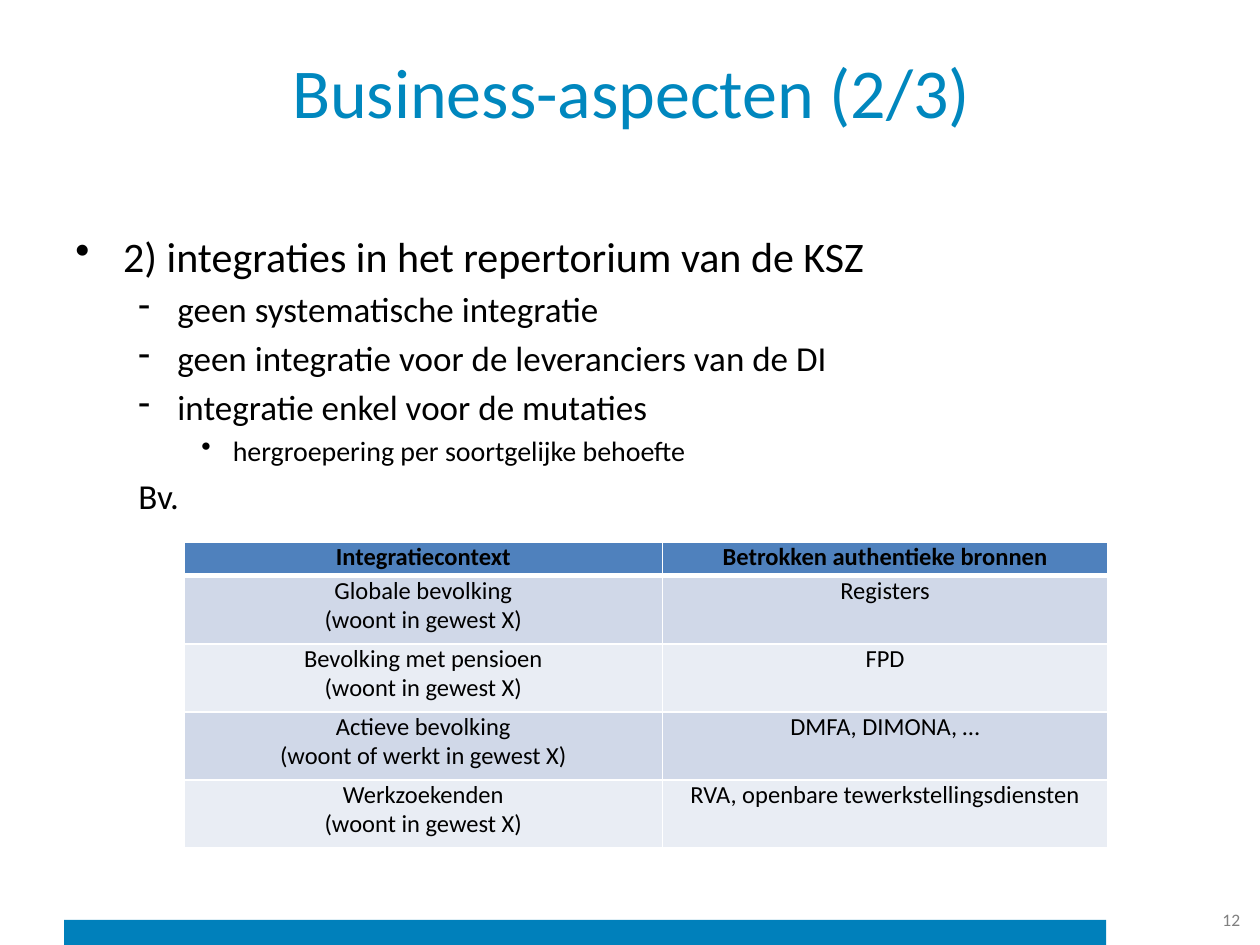
import pptx
import pptx.util
import pptx.dml.color
import pptx.enum.shapes
import pptx.enum.text
import pptx.oxml
import pptx.oxml.ns

Inches, Pt = pptx.util.Inches, pptx.util.Pt
ALIGN = pptx.enum.text.PP_ALIGN
MIDDLE = pptx.enum.text.MSO_ANCHOR.MIDDLE


def tint(code):
    return pptx.dml.color.RGBColor.from_string(code)


def write(par, text, size, code="000000", align=ALIGN.LEFT, bold=False):
    par.text = text
    par.alignment = align
    form = {"name": "Calibri", "size": Pt(size), "bold": bold}
    for font in (par.font, par.runs[0].font):
        for key, value in form.items():
            setattr(font, key, value)
        font.color.rgb = tint(code)


deck = pptx.Presentation()
deck.slide_width, deck.slide_height = Inches(10), Inches(7.5)
slide = deck.slides.add_slide(deck.slide_layouts[5])
shapes = slide.shapes

# Title
title = shapes.title
place = {"left": 0.51, "top": 0.21, "width": 9, "height": 1.01}
for key, value in place.items():
    setattr(title, key, Inches(value))
title.text_frame.vertical_anchor = MIDDLE
write(title.text_frame.paragraphs[0], "Business-aspecten (2/3)", 40,
      "0087BE", ALIGN.CENTER)

# Footer bar
bar = shapes.add_shape(pptx.enum.shapes.MSO_SHAPE.RECTANGLE,
                       Inches(0.51), Inches(7.3), Inches(8.27), Inches(0.2))
bar.shadow.inherit = False
bar.fill.solid()
bar.fill.fore_color.rgb = tint("0080BB")
bar.line.fill.background()

# Bullet list: level, bullet, text
sizes = [24, 20, 16]
lefts = [0.38, 0.81, 1.25]
hangs = [0.38, 0.31, 0.25]
items = [
    (0, "•", "2) integraties in het repertorium van de KSZ"),
    (1, "-", "geen systematische integratie"),
    (1, "-", "geen integratie voor de leveranciers van de DI"),
    (1, "-", "integratie enkel voor de mutaties"),
    (2, "•", "hergroepering per soortgelijke behoefte"),
    (1, "", "Bv."),
]
body = shapes.add_textbox(Inches(0.5), Inches(1.78), Inches(9), Inches(5.12))
frame = body.text_frame
frame.word_wrap = True
for num, (level, mark, text) in enumerate(items):
    par = frame.add_paragraph() if num else frame.paragraphs[0]
    par.level = level
    props = par._p.get_or_add_pPr()
    hang = hangs[level]
    left = lefts[level] if mark else lefts[level] - hang
    props.set("marL", str(Inches(left)))
    props.set("indent", str(Inches(-hang if mark else 0)))
    if mark:
        bullet = pptx.oxml.parse_xml(
            f'<a:buChar {pptx.oxml.ns.nsdecls("a")} char="{mark}"/>')
        props.append(bullet)
    if num:
        par.space_before = Pt(sizes[level] * 0.2)
    write(par, text, sizes[level])

# Table of contexts and sources
rows = [
    ("Integratiecontext", "Betrokken authentieke bronnen"),
    ("Globale bevolking\n(woont in gewest X)", "Registers"),
    ("Bevolking met pensioen\n(woont in gewest X)", "FPD"),
    ("Actieve bevolking\n(woont of werkt in gewest X)", "DMFA, DIMONA, …"),
    ("Werkzoekenden\n(woont in gewest X)",
     "RVA, openbare tewerkstellingsdiensten"),
]
table = shapes.add_table(len(rows), 2, Inches(1.46), Inches(4.3),
                         Inches(7.33), Inches(2.43)).table
for col, width in zip(table.columns, (3.8, 3.53)):
    col.width = Inches(width)
for r, row in enumerate(rows):
    table.rows[r].height = Inches(0.54 if r else 0.27)
    for c, text in enumerate(row):
        cell = table.cell(r, c)
        for side in ("left", "top", "right", "bottom"):
            setattr(cell, f"margin_{side}", 0)
        # White borders, thick under the header
        for side in "LRTB":
            thick = (r, side) in ((0, "B"), (1, "T"))
            line = pptx.oxml.parse_xml(
                f'<a:ln{side} {pptx.oxml.ns.nsdecls("a")} '
                f'w="{Pt(3 if thick else 1)}"><a:solidFill>'
                f'<a:srgbClr val="FFFFFF"/></a:solidFill></a:ln{side}>')
            cell._tc.get_or_add_tcPr().append(line)
        cell.fill.solid()
        shade = "4F81BD" if r == 0 else ("E9EDF4", "D0D8E8")[r % 2]
        cell.fill.fore_color.rgb = tint(shade)
        for num, part in enumerate(text.split("\n")):
            frame = cell.text_frame
            par = frame.add_paragraph() if num else frame.paragraphs[0]
            write(par, part, 14, align=ALIGN.CENTER, bold=r == 0)

# Slide number
page = shapes.add_textbox(Inches(9.12), Inches(7.1), Inches(0.82), Inches(0.4))
page.text_frame.word_wrap = True
page.text_frame.vertical_anchor = MIDDLE
write(page.text_frame.paragraphs[0], "12", 10, "808080", ALIGN.RIGHT)

deck.save("out.pptx")
